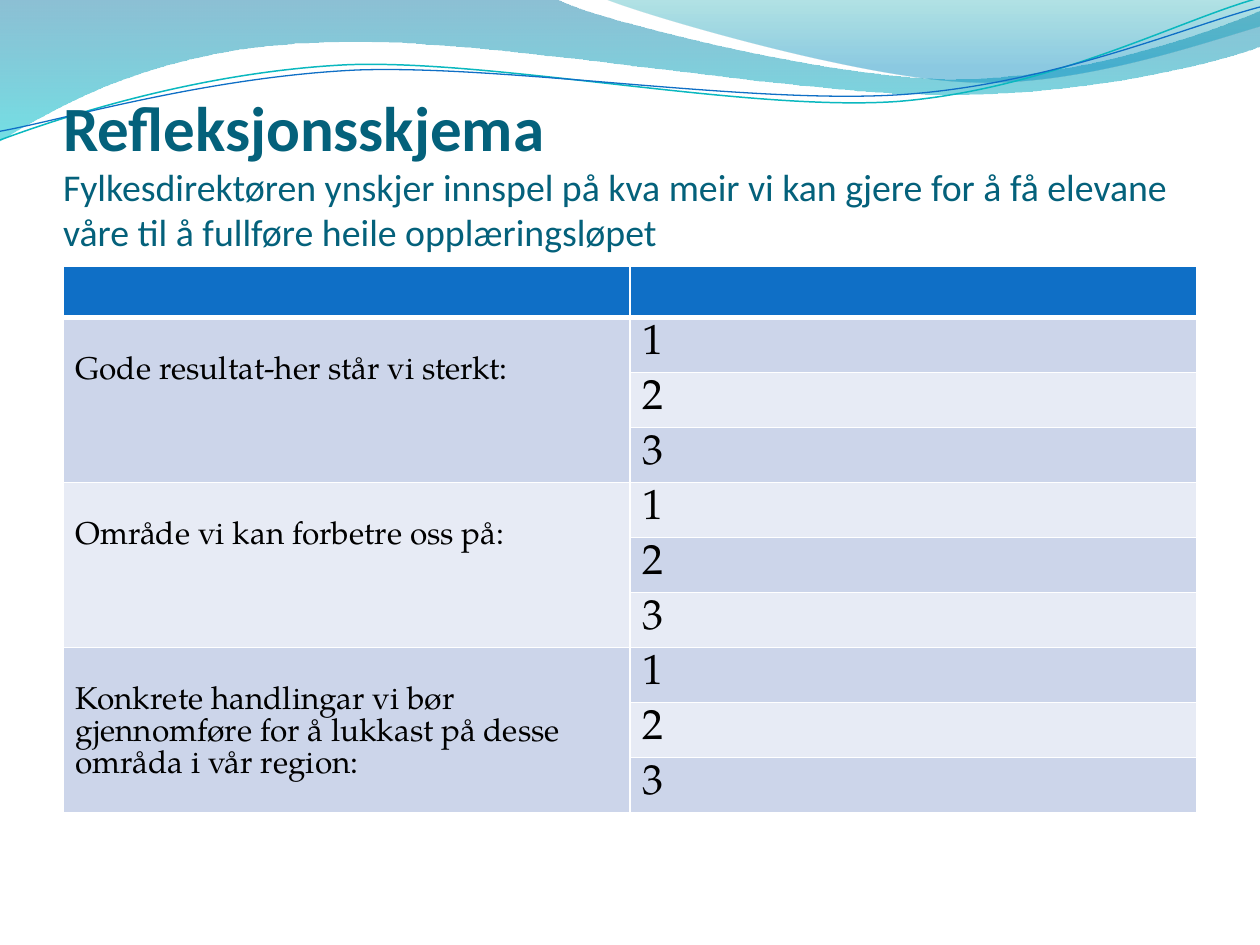
import pptx
import pptx.dml.color
import pptx.enum.text
import pptx.oxml
import pptx.oxml.ns
import pptx.util

Pt = pptx.util.Pt
qn = pptx.oxml.ns.qn
NS = pptx.oxml.ns.nsdecls("a")

COLORS = {
    "title": "04617B", "text": "000000", "header": "0F6FC6",
    "band_dark": "CCD5EA", "band_light": "E7EBF5", "border": "FFFFFF",
    "deep_blue": "0074A1", "turquoise": "00C6CF",
    "teal": "00A1A9", "sky": "008BBF",
    "line_teal": "0AB8BF", "line_blue": "0F6FC6",
}
TITLE_FONT, BODY_FONT = "Calibri", "TeX Gyre Pagella"

# Outlines in points: a pair is a straight segment, six numbers are a Bézier curve
BROAD_WAVE = [(0, 0), (317, -1), (343, 12, 478, 45, 546, 45),
              (614, 45, 690, 19, 720, 6), (721, 26),
              (708, 32, 626, 55, 537, 54), (447, 54, 275, 20, 185, 24),
              (93, 26, 33, 60, -1, 81)]
RIGHT_WAVE = [(345, -1), (366, 8, 491, 45, 554, 47),
              (616, 50, 692, 23, 720, 15), (720, 0)]
TEAL_LINE = [(0, 80), (35, 67, 114, 41, 199, 37),
             (284, 34, 427, 64, 513, 58), (600, 51, 675, 11, 719, -1)]
BLUE_LINE = [(0, 75), (34, 69, 118, 44, 204, 40),
             (290, 37, 430, 60, 516, 54), (602, 48, 678, 15, 720, 4)]

TOPICS = [
    "Gode resultat-her står vi sterkt:",
    "Område vi kan forbetre oss på:",
    "Konkrete handlingar vi bør gjennomføre for å lukkast på desse "
    "områda i vår region:",
]
ANSWERS = 3
ROW_HEIGHT = 29.2
TOPIC_LINE, ANSWER_LINE = 18.3, 24.2


def rgb(name):
    return pptx.dml.color.RGBColor.from_string(COLORS[name])


def add_outline(slide, segments, closed):
    """Join the segment ends, then bend the curved ones with their controls."""
    start, *ends = [(Pt(segment[-2]), Pt(segment[-1])) for segment in segments]
    builder = slide.shapes.build_freeform(*start)
    builder.add_line_segments(ends, close=closed)
    outline = builder.convert_to_shape()
    outline.shadow.inherit = False
    straight_lines = outline._element.findall(".//" + qn("a:lnTo"))
    for straight, segment in zip(straight_lines, segments[1:]):
        if len(segment) == 6:
            points = "".join(
                f'<a:pt x="{Pt(x) - outline.left}" y="{Pt(y) - outline.top}"/>'
                for x, y in zip(segment[::2], segment[1::2]))
            curve = pptx.oxml.parse_xml(
                f'<a:cubicBezTo {NS}>{points}</a:cubicBezTo>')
            straight.getparent().replace(straight, curve)
    return outline


def add_wave(slide, segments, stops):
    """Add a filled wave; stops hold position, colour and opacity in percent."""
    wave = add_outline(slide, segments, True)
    wave.line.fill.background()
    wave.fill.gradient()
    wave.fill.gradient_angle = 270
    for stop, (position, color, _) in zip(wave.fill.gradient_stops, stops):
        stop.position = position / 100
        stop.color.rgb = rgb(color)
    tints = wave._element.spPr.findall(".//" + qn("a:srgbClr"))
    for tint, (_, _, opacity) in zip(tints, stops):
        tint.append(pptx.oxml.parse_xml(
            f'<a:alpha {NS} val="{opacity * 1000}"/>'))


def add_wave_line(slide, segments, color, width):
    curve = add_outline(slide, segments, False)
    curve.fill.background()
    curve.line.color.rgb = rgb(color)
    curve.line.width = Pt(width)


def add_run(paragraph, text, font, size, color, bold=False):
    run = paragraph.add_run()
    run.text = text
    run.font.name = font
    run.font.size = Pt(size)
    run.font.bold = bold
    run.font.color.rgb = rgb(color)


def fill_title(slide):
    title = slide.shapes.title
    title.left, title.top, title.width, title.height = (
        Pt(36), Pt(55.4), Pt(648), Pt(90))
    frame = title.text_frame
    frame.auto_size = pptx.enum.text.MSO_AUTO_SIZE.NONE
    frame.word_wrap = True
    frame.vertical_anchor = pptx.enum.text.MSO_ANCHOR.BOTTOM
    frame.margin_left = frame.margin_right = frame.margin_bottom = Pt(0)
    frame.margin_top = Pt(3.6)
    heading = frame.paragraphs[0]
    heading.alignment = pptx.enum.text.PP_ALIGN.LEFT
    add_run(heading, "Refleksjonsskjema", TITLE_FONT, 36, "title", True)
    heading.add_line_break()
    add_run(heading, "Fylkesdirektøren ynskjer innspel på kva meir vi kan gjere "
            "for å få elevane våre til å fullføre heile opplæringsløpet",
            TITLE_FONT, 21.6, "title")
    # Bring the title in front of the waves
    slide.shapes._spTree.append(title._element)


def style_cell(cell, fill, top=1, bottom=1):
    properties = cell._tc.get_or_add_tcPr()
    for side, width in (("L", 1), ("R", 1), ("T", top), ("B", bottom)):
        properties.append(pptx.oxml.parse_xml(
            f'<a:ln{side} {NS} w="{Pt(width)}">'
            f'<a:solidFill><a:srgbClr val="{COLORS["border"]}"/></a:solidFill>'
            f'</a:ln{side}>'))
    cell.fill.solid()
    cell.fill.fore_color.rgb = rgb(fill)
    cell.margin_left = cell.margin_right = Pt(7.2)
    cell.margin_top = cell.margin_bottom = Pt(3.6)


def write_cell(cell, text, size, line):
    paragraph = cell.text_frame.paragraphs[0]
    paragraph.line_spacing = Pt(line)
    add_run(paragraph, text, BODY_FONT, size, "text")


def add_reflection_table(slide):
    rows = len(TOPICS) * ANSWERS
    form = slide.shapes.add_table(
        rows + 1, 2, Pt(36), Pt(152.3), Pt(648),
        Pt((rows + 1) * ROW_HEIGHT)).table
    for column in form.columns:
        column.width = Pt(324)
    for row in form.rows:
        row.height = Pt(ROW_HEIGHT)

    # Empty header
    for cell in form.rows[0].cells:
        style_cell(cell, "header", bottom=3)

    # One topic beside three numbered answers, in alternating bands
    bands = ("band_dark", "band_light")
    for index in range(rows):
        topic, number = divmod(index, ANSWERS)
        top = 1 if index else 3
        topic_cell, answer_cell = form.rows[index + 1].cells
        style_cell(topic_cell, bands[topic % 2], top)
        style_cell(answer_cell, bands[index % 2], top)
        write_cell(answer_cell, str(number + 1), 24, ANSWER_LINE)
        if number == 0:
            topic_cell.merge(form.cell(index + ANSWERS, 0))
            topic_cell.margin_top = Pt(3.6 + TOPIC_LINE)
            write_cell(topic_cell, TOPICS[topic], 18, TOPIC_LINE)


def main():
    deck = pptx.Presentation()
    deck.slide_width, deck.slide_height = Pt(720), Pt(540)
    slide = deck.slides.add_slide(deck.slide_layouts[5])

    # Wave decoration
    add_wave(slide, BROAD_WAVE, [(0, "deep_blue", 45), (100, "turquoise", 55)])
    add_wave(slide, RIGHT_WAVE, [(0, "teal", 30), (80, "sky", 45)])
    add_wave_line(slide, TEAL_LINE, "line_teal", 0.85)
    add_wave_line(slide, BLUE_LINE, "line_blue", 0.75)

    # Content
    fill_title(slide)
    add_reflection_table(slide)
    deck.save("out.pptx")


if __name__ == "__main__":
    main()
